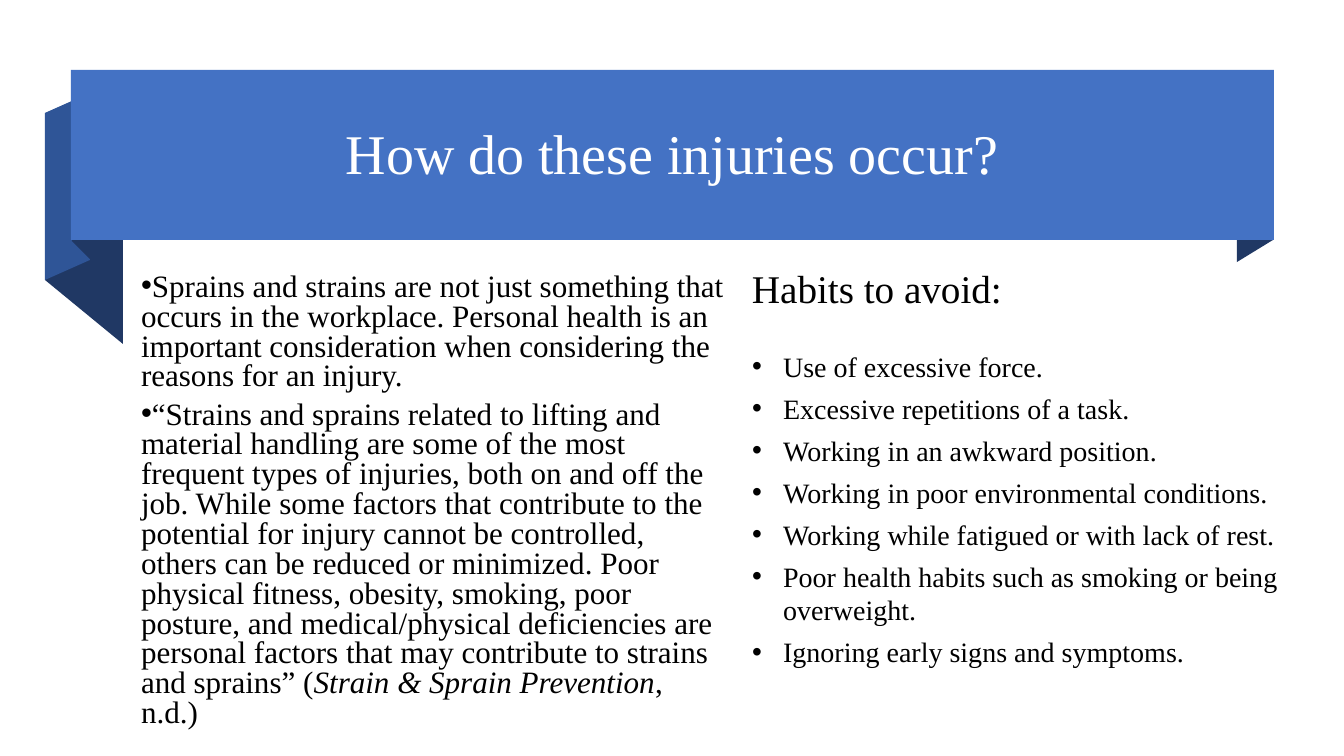
from dataclasses import dataclass

from lxml.etree import SubElement
from pptx import Presentation
from pptx.dml.color import RGBColor
from pptx.enum.shapes import MSO_SHAPE
from pptx.enum.text import MSO_ANCHOR, MSO_AUTO_SIZE, PP_ALIGN
from pptx.oxml.ns import qn
from pptx.util import Pt

EMU_PER_PX = 914400 / 100.8


@dataclass(frozen=True)
class Theme:
    font: str = "Times New Roman"
    banner: RGBColor = RGBColor(0x44, 0x72, 0xC4)
    side: RGBColor = RGBColor(0x2F, 0x55, 0x97)
    fold: RGBColor = RGBColor(0x20, 0x38, 0x64)
    light: RGBColor = RGBColor(0xFF, 0xFF, 0xFF)
    dark: RGBColor = RGBColor(0, 0, 0)
    title_size: float = 40
    heading_size: float = 28
    causes_size: float = 22.2
    habits_size: float = 20


THEME = Theme()

RIBBON_FOLDS = [
    ([(123, 344), (45, 280), (45, 113), (123, 176)], THEME.fold),
    ([(90, 260), (45, 280), (45, 113), (90, 93)], THEME.side),
    ([(90, 259), (72, 241), (72, 71), (90, 90)], THEME.fold),
    ([(1273, 240), (1237, 262), (1237, 92), (1273, 71)], THEME.fold),
]

# Each paragraph is a list of (text, italic) runs
CAUSES = [
    [("Sprains and strains are not just something that occurs in the workplace. "
      "Personal health is an important consideration when considering the "
      "reasons for an injury.", False)],
    [("“Strains and sprains related to lifting and material handling are some "
      "of the most frequent types of injuries, both on and off the job. While "
      "some factors that contribute to the potential for injury cannot be "
      "controlled, others can be reduced or minimized. Poor physical fitness, "
      "obesity, smoking, poor posture, and medical/physical deficiencies are "
      "personal factors that may contribute to strains and sprains” (", False),
     ("Strain & Sprain Prevention", True),
     (", n.d.)", False)],
]

HABITS = [
    "Use of excessive force.",
    "Excessive repetitions of a task.",
    "Working in an awkward position.",
    "Working in poor environmental conditions.",
    "Working while fatigued or with lack of rest.",
    "Poor health habits such as smoking or being overweight.",
    "Ignoring early signs and symptoms.",
]


def px(length):
    return round(length * EMU_PER_PX)


def paint(shape, color):
    shape.shadow.inherit = False
    shape.fill.solid()
    shape.fill.fore_color.rgb = color
    shape.line.fill.background()


def add_fold(slide, points, color):
    builder = slide.shapes.build_freeform(*points[0], scale=EMU_PER_PX)
    builder.add_line_segments(points[1:], close=True)
    paint(builder.convert_to_shape(), color)


def add_banner(slide, left, top, width, height):
    banner = slide.shapes.add_shape(
        MSO_SHAPE.RECTANGLE, px(left), px(top), px(width), px(height))
    paint(banner, THEME.banner)


def place(slide, shape, left, top, width, height):
    """Set the box and bring it in front of the ribbon."""
    shape.left, shape.top = px(left), px(top)
    shape.width, shape.height = px(width), px(height)
    slide.shapes.element.append(shape.element)


def set_bullet(paragraph, margin, indent):
    properties = paragraph._p.get_or_add_pPr()
    properties.set("marL", str(px(margin)))
    properties.set("indent", str(px(indent)))
    SubElement(properties, qn("a:buFont"), typeface="Arial")
    SubElement(properties, qn("a:buChar"), char="•")


def write(shape, paragraphs, size, color=THEME.dark, anchor=MSO_ANCHOR.TOP,
          align=PP_ALIGN.LEFT, line_spacing=1.0, space_after=6, bullet=None):
    frame = shape.text_frame
    frame.word_wrap = True
    frame.auto_size = MSO_AUTO_SIZE.NONE
    frame.vertical_anchor = anchor
    for index, runs in enumerate(paragraphs):
        paragraph = frame.add_paragraph() if index else frame.paragraphs[0]
        paragraph.alignment = align
        paragraph.line_spacing = line_spacing
        paragraph.space_before = Pt(0)
        paragraph.space_after = Pt(space_after)
        if bullet:
            set_bullet(paragraph, *bullet)
        for text, italic in runs:
            run = paragraph.add_run()
            run.text = text
            run.font.name = THEME.font
            run.font.size = Pt(size)
            run.font.italic = italic
            run.font.color.rgb = color


def main():
    presentation = Presentation()
    presentation.slide_width, presentation.slide_height = px(1344), px(756)
    slide = presentation.slides.add_slide(presentation.slide_layouts[3])
    title, causes, habits = list(slide.placeholders)[:3]

    # Ribbon
    for points, color in RIBBON_FOLDS:
        add_fold(slide, points, color)
    add_banner(slide, 71, 70, 1203, 170)

    # Title
    place(slide, title, 106, 89, 1132, 134)
    write(title, [[("How do these injuries occur?", False)]], THEME.title_size,
          color=THEME.light, anchor=MSO_ANCHOR.MIDDLE, align=PP_ALIGN.CENTER,
          line_spacing=0.9)

    # Causes
    place(slide, causes, 131, 277, 604, 449)
    write(causes, CAUSES, THEME.causes_size, anchor=MSO_ANCHOR.MIDDLE,
          line_spacing=0.8, bullet=(0, -25))

    # Habits
    place(slide, habits, 742, 344, 587, 450)
    write(habits, [[(habit, False)] for habit in HABITS], THEME.habits_size,
          bullet=(31, -31))
    heading = slide.shapes.add_textbox(px(742), px(259), px(552), px(57))
    write(heading, [[("Habits to avoid:", False)]], THEME.heading_size,
          space_after=0)

    presentation.save("out.pptx")


if __name__ == "__main__":
    main()
